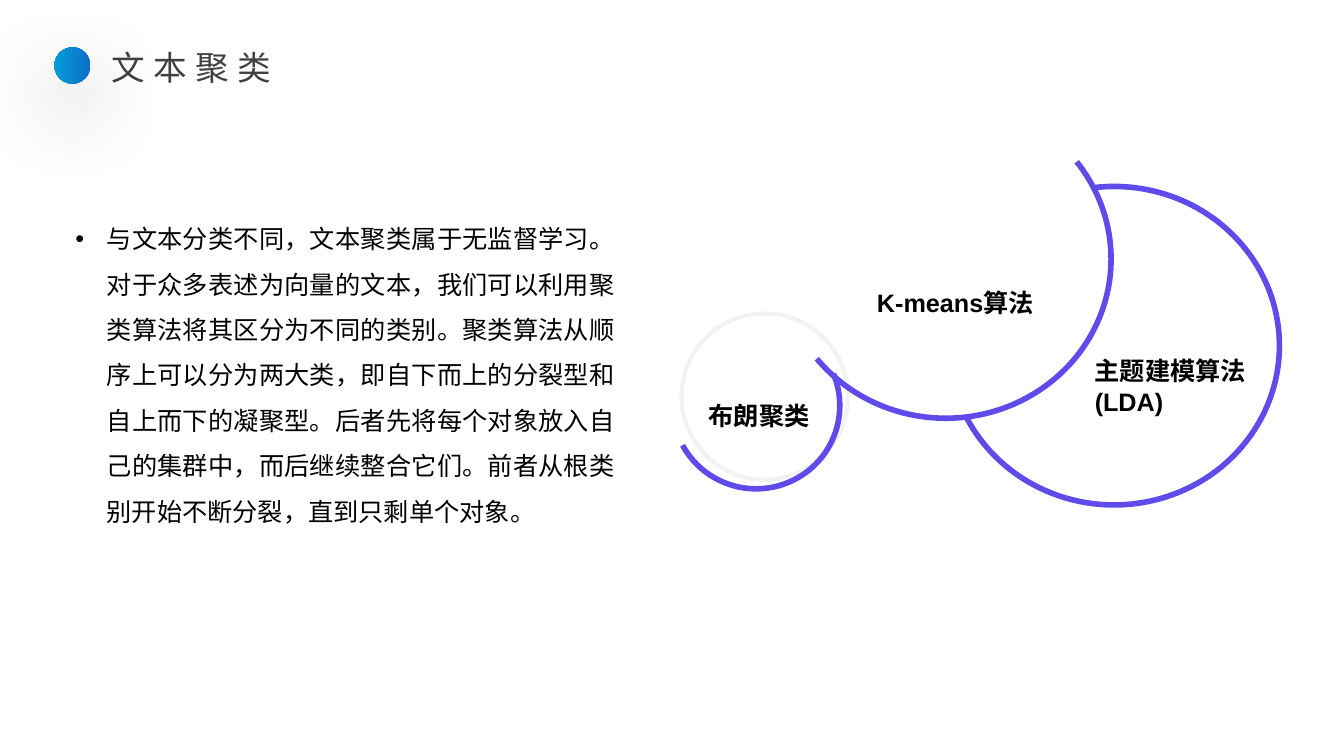
from dataclasses import dataclass

from lxml import etree
from pptx import Presentation
from pptx.dml.color import RGBColor
from pptx.enum.shapes import MSO_SHAPE
from pptx.enum.text import MSO_ANCHOR, MSO_AUTO_SIZE, PP_ALIGN
from pptx.oxml.ns import qn
from pptx.util import Inches, Pt

ARC, ELLIPSE = MSO_SHAPE.ARC, MSO_SHAPE.OVAL
JUSTIFY, LEFT = PP_ALIGN.JUSTIFY, PP_ALIGN.LEFT
TOP, FIT = MSO_ANCHOR.TOP, MSO_AUTO_SIZE.SHAPE_TO_FIT_TEXT
TITLE_ONLY = 5


@dataclass(frozen=True)
class Theme:
    title: str = "404040"
    text: str = "000000"
    accent: str = "5E4BEA"
    pale: str = "F2F2F2"
    dot_from: str = "0F6FC6"
    dot_to: str = "009DD9"
    latin: str = "Arial"
    cjk: str = "Noto Sans CJK SC"
    title_size: int = 24
    body_size: int = 18


THEME = Theme()

BODY = (
    "与文本分类不同，文本聚类属于无监督学习。对于众多表述为向量的文本，"
    "我们可以利用聚类算法将其区分为不同的类别。聚类算法从顺序上可以分为两大类，"
    "即自下而上的分裂型和自上而下的凝聚型。后者先将每个对象放入自己的集群中，"
    "而后继续整合它们。前者从根类别开始不断分裂，直到只剩单个对象。"
)

# Offsets within the diagram: left, top, width, height
RING = (0.09, 2.12, 1.65, 1.65)
# Arcs add start and end angle in degrees, clockwise from the right
ARCS = [
    (0, 2.21, 1.66, 1.65, 337.48, 151.73),
    (1.07, 0, 3.28, 3.16, 323.4, 142.29),
    (2.74, 0.86, 3.28, 3.16, 262.1, 154.43),
]
LABELS = [
    (0.26, 2.93, 1.29, 0.4, ["布朗聚类"]),
    (1.93, 1.81, 2, 0.4, ["K-means算法"]),
    (4.09, 2.49, 2.1, 0.71, ["主题建模算法", "(LDA)"]),
]


def place(sp, x, y, w, h):
    sp.left, sp.top, sp.width, sp.height = map(Inches, (x, y, w, h))


def write(sp, lines, size, color, latin, bold=False, align=LEFT):
    tf = sp.text_frame
    tf.word_wrap = True
    tf.auto_size = FIT
    tf.vertical_anchor = TOP
    tf.text = "\n".join(lines)
    for p in tf.paragraphs:
        p.alignment = align
        p.font.size, p.font.bold, p.font.name = Pt(size), bold, latin
        p.font.color.rgb = RGBColor.from_string(color)
        for r in p.runs:
            ea = etree.SubElement(r.font._element, qn("a:ea"))
            ea.set("typeface", THEME.cjk)
    return tf


def add_outline(slide, kind, box, color, width):
    sp = slide.shapes.add_shape(kind, *map(Inches, box))
    sp.shadow.inherit = False
    sp.fill.background()
    sp.line.color.rgb = RGBColor.from_string(color)
    sp.line.width = Pt(width)
    return sp


def add_soft_shadow(sp, alpha, blur, distance):
    sp.shadow.inherit = False
    effects = sp._element.spPr.find(qn("a:effectLst"))
    shadow = etree.SubElement(
        effects, qn("a:outerShdw"), blurRad=str(Pt(blur)), dist=str(Pt(distance)),
        dir="5400000", algn="t", rotWithShape="0")
    color = etree.SubElement(shadow, qn("a:srgbClr"), val=THEME.text)
    etree.SubElement(color, qn("a:alpha"), val=str(alpha * 1000))


def add_header(slide, x, y, w, h):
    # Gradient dot
    dot = slide.shapes.add_shape(
        ELLIPSE, Inches(x), Inches(y + 0.05), Inches(0.36), Inches(0.36))
    dot.line.fill.background()
    dot.fill.gradient()
    dot.fill.gradient_angle = 180
    for stop, color in zip(dot.fill.gradient_stops, (THEME.dot_from, THEME.dot_to)):
        stop.color.rgb = RGBColor.from_string(color)
    add_soft_shadow(dot, alpha=40, blur=60, distance=20)

    # Letter-spaced title
    title = slide.shapes.title
    place(title, x + 0.47, y, w - 0.47, h)
    tf = write(title, ["文本聚类"], THEME.title_size, THEME.title, THEME.cjk,
               align=JUSTIFY)
    tf.paragraphs[0].line_spacing = 1.0
    tf.paragraphs[0].runs[0].font._element.set("spc", "600")


def add_body(slide, x, y, w, h):
    sp = slide.shapes.add_textbox(*map(Inches, (x, y, w, h)))
    tf = write(sp, [BODY], THEME.body_size, THEME.text, THEME.cjk, align=JUSTIFY)
    p = tf.paragraphs[0]
    p.line_spacing = 1.5
    pPr = p._p.get_or_add_pPr()
    pPr.set("marL", str(Inches(0.31)))
    pPr.set("indent", str(-Inches(0.31)))
    bullet_font = etree.Element(qn("a:buFont"), typeface=THEME.latin)
    bullet = etree.Element(qn("a:buChar"), char="•")
    pPr.find(qn("a:lnSpc")).addnext(bullet_font)
    bullet_font.addnext(bullet)


def add_diagram(slide, x, y):
    # Algorithm names
    for dx, dy, w, h, lines in LABELS:
        sp = slide.shapes.add_textbox(*map(Inches, (x + dx, y + dy, w, h)))
        write(sp, lines, THEME.body_size, THEME.text, THEME.latin, bold=True)

    # Pale ring behind the linked arcs
    dx, dy, w, h = RING
    add_outline(slide, ELLIPSE, (x + dx, y + dy, w, h), THEME.pale, 3)
    for dx, dy, w, h, start, end in ARCS:
        arc = add_outline(slide, ARC, (x + dx, y + dy, w, h), THEME.accent, 4)
        # Adjustments count 100000ths, angles 60000ths of a degree
        arc.adjustments[0] = start * 0.6
        arc.adjustments[1] = end * 0.6


def main():
    prs = Presentation()
    prs.slide_width, prs.slide_height = Inches(13.33), Inches(7.5)
    slide = prs.slides.add_slide(prs.slide_layouts[TITLE_ONLY])
    add_header(slide, 0.54, 0.42, 7.24, 0.5)
    add_body(slide, 0.65, 2.02, 5.55, 3.28)
    add_diagram(slide, 6.67, 0.99)
    prs.save("out.pptx")


if __name__ == "__main__":
    main()
